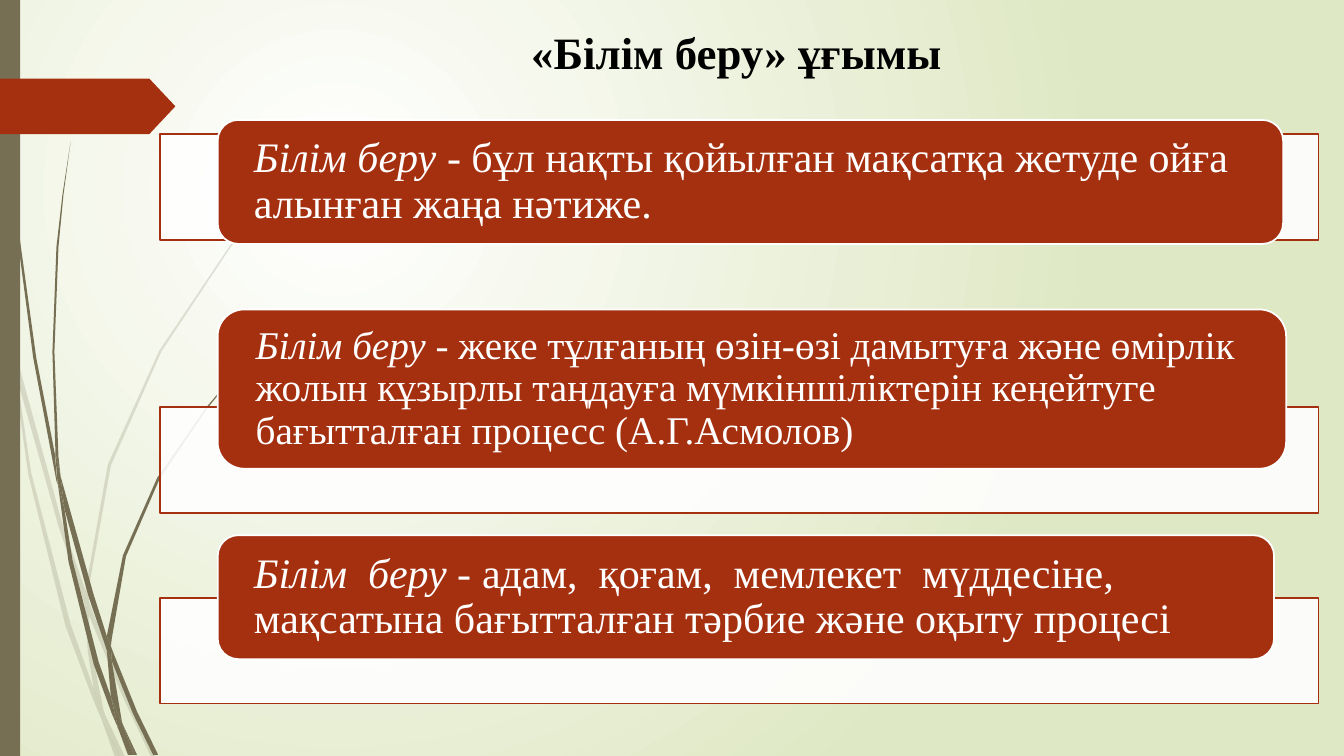
from dataclasses import dataclass

from lxml.etree import SubElement
from pptx import Presentation
from pptx.dml.color import RGBColor
from pptx.enum.shapes import MSO_SHAPE as Preset
from pptx.enum.text import MSO_ANCHOR as Anchor, MSO_AUTO_SIZE as AutoSize, PP_ALIGN as Align
from pptx.oxml.ns import qn
from pptx.shapes.base import BaseShape
from pptx.slide import Slide
from pptx.text.text import _Paragraph as Paragraph
from pptx.util import Inches, Pt

Point = tuple[float, float]


@dataclass(frozen=True)
class Theme:
    font: str = "Times New Roman"
    white: str = "FFFFFF"
    black: str = "000000"
    accent: str = "A53010"
    stem: str = "766F54"
    meadow: str = "DFE8C4"
    title_size: int = 32
    line_width: float = 1.25


@dataclass(frozen=True)
class Card:
    """A definition on a rounded card, in front of a pale panel."""
    panel_top: float
    top: float
    width: float
    height: float
    size: int
    term: str
    meaning: str


@dataclass(frozen=True)
class Tuft:
    """Grass blades of one opacity, each given by its outline."""
    opacity: int
    blades: list[list[Point]]


THEME = Theme()
SLIDE_WIDTH, SLIDE_HEIGHT = 40 / 3, 7.5
PANEL_LEFT, PANEL_WIDTH, PANEL_HEIGHT = 1.59, 11.49, 1.05
CARD_LEFT, CARD_INSET = 2.16, 0.3

CARDS = [
    Card(1.33, 1.19, 10.57, 1.23, 30, "Білім беру ",
         "- бұл нақты қойылған мақсатқа жетуде ойға алынған жаңа нәтиже."),
    Card(4.04, 3.07, 10.6, 1.58, 28, "Білім беру ",
         "- жеке тұлғаның өзін-өзі дамытуға және өмірлік жолын кұзырлы таңдауға "
         "мүмкіншіліктерін кеңейтуге бағытталған процесс (А.Г.Асмолов)"),
    Card(5.93, 5.31, 10.48, 1.23, 30, "Білім  беру - ",
         "адам,  қоғам,  мемлекет  мүддесіне,  мақсатына бағытталған "
         "тәрбие және оқыту процесі"),
]

PALE_TUFT = Tuft(20, [
    [(0.11, 3.5), (0.09, 3.22), (0, 2.82), (0, 2.99), (0.1, 3.44)],
    [(0.58, 5.22), (0.84, 5.99), (0.85, 5.86), (0.62, 5.2), (0.14, 3.45), (0.17, 3.76)],
    [(0.92, 6.07), (0.88, 5.96), (0.88, 6.1), (1.23, 6.94), (1.5, 7.51), (1.55, 7.51),
     (1.27, 6.92)],
    [(1.19, 7.51), (1.24, 7.51), (1.05, 7.11)],
    [(0.93, 6.83), (0.7, 6.19), (0.31, 4.69), (0.17, 3.76), (0.11, 3.5), (0.28, 4.7),
     (0.65, 6.21), (0.92, 6.93), (1.01, 7.14), (0.99, 7.07)],
    [(0.84, 5.99), (0.87, 6.46), (0.93, 6.83), (0.96, 6.92), (1.05, 7.11), (1.03, 7.06),
     (0.91, 6.46), (0.88, 6.1), (0.88, 6.08)],
    [(0.88, 5.84), (1.1, 4.62), (1.6, 3.49), (2.29, 2.45), (2.68, 1.98), (2.9, 1.75),
     (3.12, 1.54), (3.12, 1.53), (2.89, 1.75), (2.68, 1.97), (2.28, 2.44), (1.58, 3.48),
     (1.07, 4.61), (0.85, 5.84), (0.85, 5.86), (0.88, 5.96)],
    [(1.01, 7.14), (1.14, 7.51), (1.19, 7.51)],
    [(0.88, 6.08), (0.88, 6.1), (0.88, 5.96), (0.85, 5.86), (0.84, 5.99)],
    [(0.96, 6.92), (0.93, 6.83), (0.99, 7.07), (1.01, 7.14), (1.19, 7.51), (1.05, 7.11)],
])

DARK_TUFT = Tuft(100, [
    [(0.07, 1.1), (0.17, 2.33), (0.33, 3.55), (0.56, 4.77), (0.57, 4.81), (0.55, 4.57),
     (0.55, 4.53), (0.36, 3.55), (0.19, 2.32), (0.08, 1.09), (0.05, 0.48), (0.04, 0),
     (0.03, 0), (0.04, 0.48)],
    [(0.88, 5.92), (1.06, 6.45), (1.06, 6.33), (1.06, 6.31), (0.93, 5.9), (0.6, 4.72),
     (0.64, 5.05)],
    [(1.13, 6.49), (1.1, 6.41), (1.11, 6.56), (1.32, 7.08), (1.52, 7.49), (1.57, 7.49),
     (1.36, 7.06)],
    [(1.1, 6.91), (0.98, 6.57), (0.72, 5.56), (0.64, 5.05), (0.57, 4.77), (0.68, 5.57),
     (0.93, 6.59), (1.11, 7.08), (1.17, 7.22), (1.16, 7.17)],
    [(0.6, 4.72), (0.58, 4.53), (0.54, 3.49), (0.58, 2.45), (0.63, 1.93), (0.7, 1.41),
     (0.62, 1.93), (0.56, 2.45), (0.52, 3.49), (0.55, 4.49)],
    [(1.33, 7.49), (1.36, 7.49), (1.22, 7.19)],
    [(0.57, 4.77), (0.64, 5.05), (0.6, 4.72), (0.55, 4.49), (0.55, 4.53)],
    [(1.11, 6.33), (1.25, 5.52), (1.58, 4.76), (2.05, 4.06), (2.31, 3.74), (2.45, 3.59),
     (2.61, 3.44), (2.6, 3.44), (2.45, 3.58), (2.31, 3.73), (2.04, 4.05), (1.56, 4.74),
     (1.22, 5.51), (1.06, 6.31), (1.1, 6.41)],
    [(1.17, 7.22), (1.27, 7.49), (1.31, 7.49)],
    [(1.06, 6.45), (1.1, 6.91), (1.16, 7.06), (1.22, 7.19), (1.21, 7.16), (1.11, 6.56),
     (1.09, 6.51)],
    [(1.06, 6.45), (1.09, 6.51), (1.11, 6.56), (1.1, 6.41), (1.06, 6.31), (1.06, 6.33)],
    [(1.16, 7.06), (1.1, 6.91), (1.16, 7.17), (1.17, 7.22), (1.3, 7.49), (1.33, 7.49),
     (1.22, 7.19)],
])


def paint(shape: BaseShape, fill: str, line: str | None = None, opacity: int = 100) -> None:
    shape.shadow.inherit = False
    shape.fill.solid()
    shape.fill.fore_color.rgb = RGBColor.from_string(fill)
    if opacity < 100:
        color = shape.element.spPr.find(qn("a:solidFill"))[0]
        SubElement(color, qn("a:alpha"), val=str(opacity * 1000))
    if line:
        shape.line.color.rgb = RGBColor.from_string(line)
        shape.line.width = Pt(THEME.line_width)
    else:
        shape.line.fill.background()


def add_box(page: Slide, preset: Preset, left: float, top: float,
            width: float, height: float) -> BaseShape:
    return page.shapes.add_shape(
        preset, Inches(left), Inches(top), Inches(width), Inches(height))


def add_span(para: Paragraph, text: str, size: int, color: str,
             bold: bool = False, italic: bool = False) -> None:
    span = para.add_run()
    span.text = text
    span.font.name = THEME.font
    span.font.size = Pt(size)
    span.font.bold = bold
    span.font.italic = italic
    span.font.color.rgb = RGBColor.from_string(color)


def add_tuft(page: Slide, tuft: Tuft) -> None:
    for blade in tuft.blades:
        outline = [(Inches(x), Inches(y)) for x, y in blade]
        builder = page.shapes.build_freeform(*outline[0])
        builder.add_line_segments(outline[1:], close=True)
        paint(builder.convert_to_shape(), THEME.stem, opacity=tuft.opacity)


def add_card(page: Slide, card: Card) -> None:
    panel = add_box(page, Preset.RECTANGLE, PANEL_LEFT, card.panel_top,
                    PANEL_WIDTH, PANEL_HEIGHT)
    paint(panel, THEME.white, THEME.accent, opacity=90)
    box = add_box(page, Preset.ROUNDED_RECTANGLE, CARD_LEFT, card.top,
                  card.width, card.height)
    paint(box, THEME.accent, THEME.white)
    frame = box.text_frame
    frame.word_wrap = True
    frame.vertical_anchor = Anchor.MIDDLE
    frame.margin_left = frame.margin_right = Inches(CARD_INSET)
    frame.margin_top = frame.margin_bottom = 0
    para = frame.paragraphs[0]
    para.alignment = Align.LEFT
    para.line_spacing = 0.9
    add_span(para, card.term, card.size, THEME.white, italic=True)
    add_span(para, card.meaning, card.size, THEME.white)


def fill_background(page: Slide) -> None:
    """Spread a radial gradient from the upper left."""
    fill = page.background.fill
    fill.gradient()
    for stop, color, position in zip(fill.gradient_stops, (THEME.white, THEME.meadow), (0, 1)):
        stop.color.rgb = RGBColor.from_string(color)
        stop.position = position
    gradient = page.element.find(".//" + qn("a:gradFill"))
    gradient.remove(gradient.find(qn("a:lin")))
    radial = SubElement(gradient, qn("a:path"), path="circle")
    SubElement(radial, qn("a:fillToRect"), l="50000", t="50000", r="100000", b="100000")


def set_title(page: Slide, text: str) -> None:
    title = page.shapes.title
    title.left, title.top = Inches(5.17), Inches(0.19)
    title.width, title.height = Inches(4.31), Inches(0.64)
    frame = title.text_frame
    frame.word_wrap = False
    frame.auto_size = AutoSize.SHAPE_TO_FIT_TEXT
    frame.vertical_anchor = Anchor.TOP
    para = frame.paragraphs[0]
    para.alignment = Align.LEFT
    add_span(para, text, THEME.title_size, THEME.black, bold=True)


def main() -> None:
    deck = Presentation()
    deck.slide_width, deck.slide_height = Inches(SLIDE_WIDTH), Inches(SLIDE_HEIGHT)
    page = deck.slides.add_slide(deck.slide_layouts[5])
    fill_background(page)
    set_title(page, "«Білім беру» ұғымы")
    for tuft in (PALE_TUFT, DARK_TUFT):
        add_tuft(page, tuft)
    paint(add_box(page, Preset.RECTANGLE, 0, 0, 0.2, SLIDE_HEIGHT), THEME.stem)
    flag = add_box(page, Preset.PENTAGON, 0, 0.78, 1.74, 0.55)
    flag.adjustments[0] = 0.47
    paint(flag, THEME.accent)
    for card in CARDS:
        add_card(page, card)
    deck.save("out.pptx")


if __name__ == "__main__":
    main()
